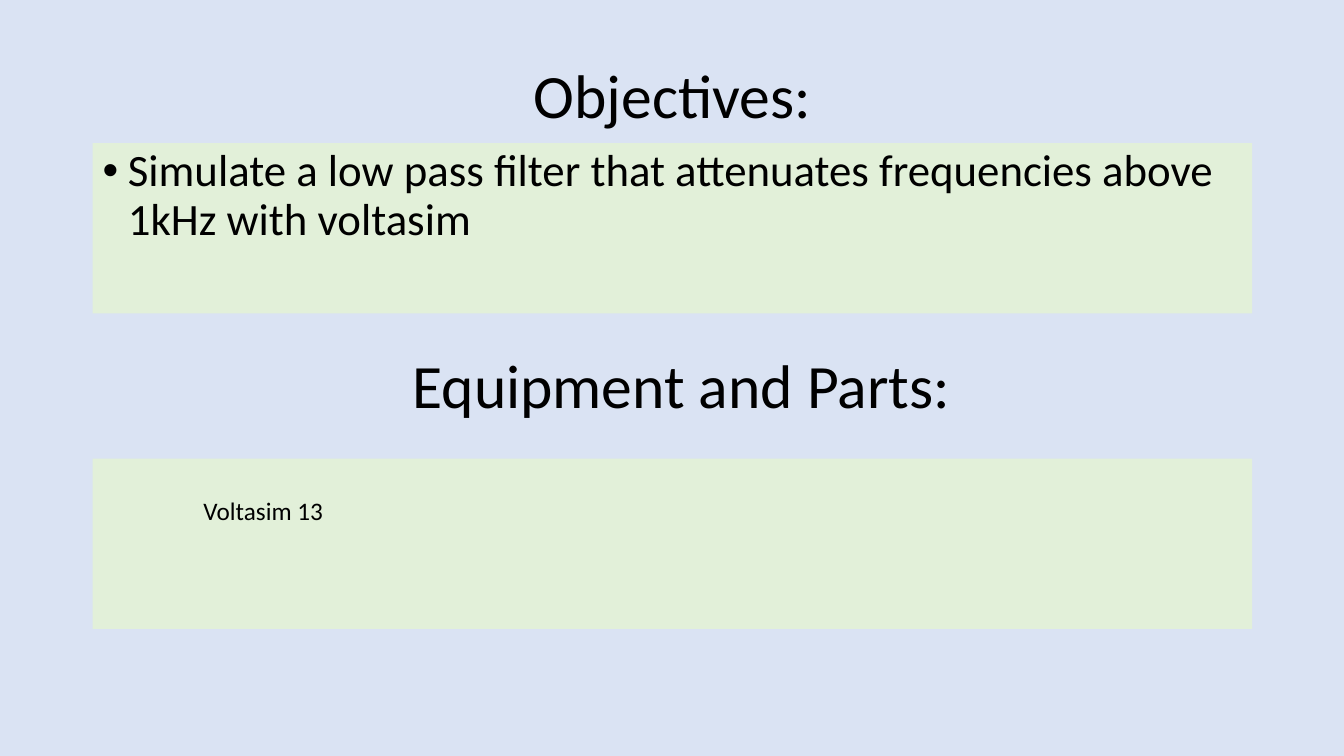
from dataclasses import dataclass

from lxml import etree
from pptx import Presentation
from pptx.dml.color import RGBColor
from pptx.enum.shapes import MSO_SHAPE
from pptx.enum.text import MSO_ANCHOR, PP_ALIGN
from pptx.oxml.ns import qn
from pptx.slide import Slide
from pptx.text.text import TextFrame
from pptx.util import Inches, Pt

RECT = MSO_SHAPE.RECTANGLE
TOP, MIDDLE = MSO_ANCHOR.TOP, MSO_ANCHOR.MIDDLE
LEFT, CENTER = PP_ALIGN.LEFT, PP_ALIGN.CENTER


@dataclass(frozen=True)
class Theme:
    background: RGBColor = RGBColor(0xDA, 0xE3, 0xF3)
    panel: RGBColor = RGBColor(0xE2, 0xF0, 0xD9)
    text: RGBColor = RGBColor(0, 0, 0)
    font: str = "Calibri"
    heading_size: int = 44
    body_size: int = 32
    detail_size: int = 18


@dataclass(frozen=True)
class Heading:
    text: str
    left: float
    top: float


@dataclass(frozen=True)
class Panel:
    text: str
    top: float
    size: int
    line_spacing: float
    margin: float
    hanging: float = 0
    bullet: str = ""
    inset_top: float = 0.05


THEME = Theme()
PANEL_LEFT, WIDTH = 0.92, 11.5
HEADING_HEIGHT, PANEL_HEIGHT = 1.45, 1.69

HEADINGS = [
    Heading("Objectives:", PANEL_LEFT, 0.25),
    Heading("Equipment and Parts:", 1.01, 3.13),
]
PANELS = [
    Panel("Simulate a low pass filter that attenuates frequencies above "
          "1kHz with voltasim", 1.42, THEME.body_size, 0.9,
          margin=0.25, hanging=0.25, bullet="•"),
    Panel("Voltasim 13", 4.55, THEME.detail_size, 1.0,
          margin=1, inset_top=0.36),
]


def write(tf: TextFrame, text: str, size: int, anchor: MSO_ANCHOR,
          align: PP_ALIGN, line_spacing: float):
    """Fill a text frame with one formatted paragraph and return it."""
    tf.word_wrap = True
    tf.vertical_anchor = anchor
    p = tf.paragraphs[0]
    p.alignment, p.line_spacing = align, line_spacing
    r = p.add_run()
    r.text = text
    for name, value in {"name": THEME.font, "size": Pt(size)}.items():
        setattr(r.font, name, value)
    r.font.color.rgb = THEME.text
    return p


def add_heading(s: Slide, heading: Heading) -> None:
    sp = s.shapes.add_textbox(Inches(heading.left), Inches(heading.top),
                              Inches(WIDTH), Inches(HEADING_HEIGHT))
    write(sp.text_frame, heading.text, THEME.heading_size, MIDDLE, CENTER, 0.9)


def add_panel(s: Slide, panel: Panel) -> None:
    sp = s.shapes.add_shape(RECT, Inches(PANEL_LEFT), Inches(panel.top),
                            Inches(WIDTH), Inches(PANEL_HEIGHT))
    sp.shadow.inherit = False
    sp.fill.solid()
    sp.fill.fore_color.rgb = THEME.panel
    sp.line.fill.background()
    tf = sp.text_frame
    tf.margin_top = Inches(panel.inset_top)
    p = write(tf, panel.text, panel.size, TOP, LEFT, panel.line_spacing)

    # Indent and bullet
    pPr = p._p.get_or_add_pPr()
    pPr.set("marL", str(Inches(panel.margin)))
    pPr.set("indent", str(-Inches(panel.hanging)))
    if panel.bullet:
        etree.SubElement(pPr, qn("a:buFont"), typeface="Arial")
        etree.SubElement(pPr, qn("a:buChar"), char=panel.bullet)


def main() -> None:
    prs = Presentation()
    prs.slide_width, prs.slide_height = Inches(13.33), Inches(7.5)
    s = prs.slides.add_slide(prs.slide_layouts[6])
    s.background.fill.solid()
    s.background.fill.fore_color.rgb = THEME.background

    # Each heading sits above its panel
    for heading, panel in zip(HEADINGS, PANELS):
        add_heading(s, heading)
        add_panel(s, panel)
    prs.save("out.pptx")


if __name__ == "__main__":
    main()
